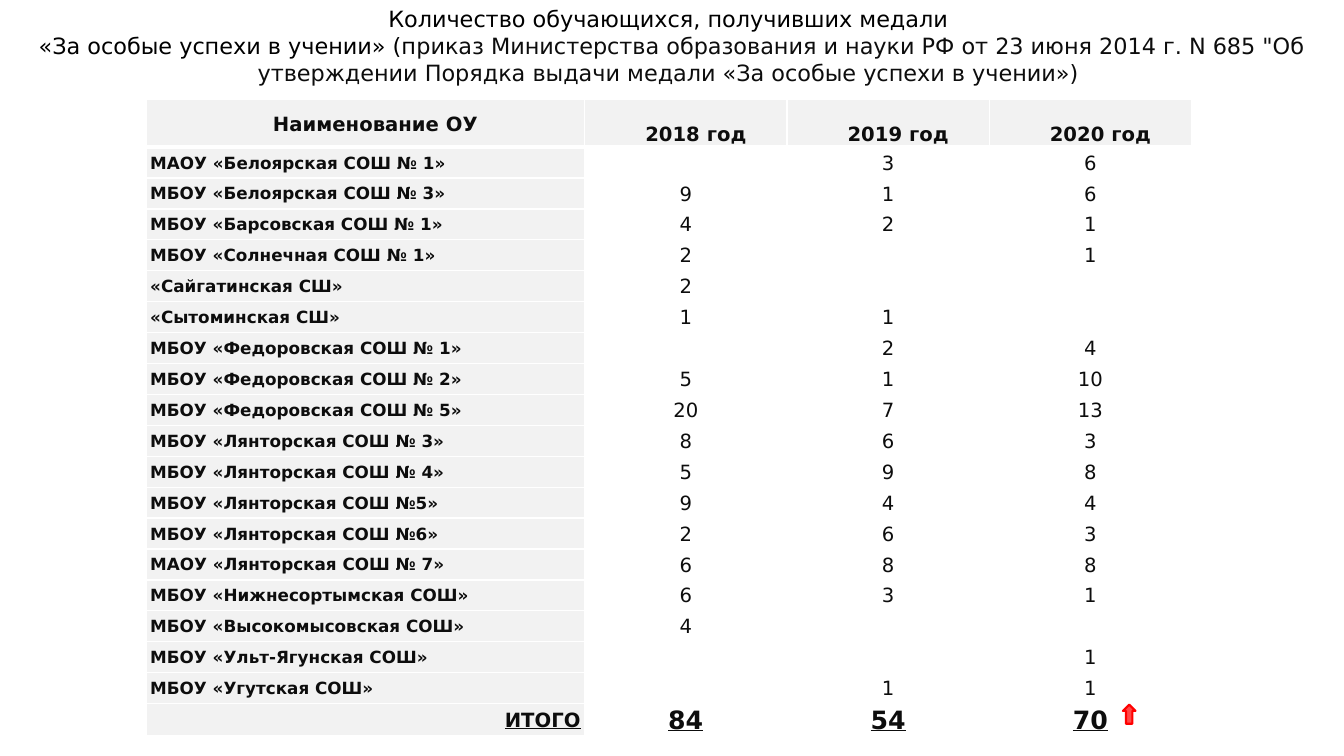
import pptx
import pptx.dml.color
import pptx.enum.shapes
import pptx.enum.text
import pptx.oxml
import pptx.oxml.ns
import pptx.util

Pt = pptx.util.Pt
PP_ALIGN = pptx.enum.text.PP_ALIGN
ANCHOR = pptx.enum.text.MSO_ANCHOR

FONT = "DejaVu Sans"
INK, GREY, WHITE = "0D0D0D", "F2F2F2", "FFFFFF"

TITLE = [
    ["Количество обучающихся, получивших медали"],
    [" «За особые успехи в учении» (п",
     "риказ Министерства образования и науки РФ от 23 июня 2014 г. N 685 "
     "\"Об утверждении Порядка выдачи медали «За особые успехи в учении»)"],
]

MEDALS = [
    ("Наименование ОУ", "2018 год", "2019 год", "2020 год"),
    ("МАОУ «Белоярская СОШ № 1»", "", "3", "6"),
    ("МБОУ «Белоярская СОШ № 3»", "9", "1", "6"),
    ("МБОУ «Барсовская СОШ № 1»", "4", "2", "1"),
    ("МБОУ «Солнечная СОШ № 1»", "2", "", "1"),
    ("«Сайгатинская СШ»", "2", "", ""),
    ("«Сытоминская СШ»", "1", "1", ""),
    ("МБОУ «Федоровская СОШ № 1»", "", "2", "4"),
    ("МБОУ «Федоровская СОШ № 2»", "5", "1", "10"),
    ("МБОУ «Федоровская СОШ № 5»", "20", "7", "13"),
    ("МБОУ «Лянторская СОШ № 3»", "8", "6", "3"),
    ("МБОУ «Лянторская СОШ № 4»", "5", "9", "8"),
    ("МБОУ «Лянторская СОШ №5»", "9", "4", "4"),
    ("МБОУ «Лянторская СОШ №6»", "2", "6", "3"),
    ("МАОУ «Лянторская СОШ № 7»", "6", "8", "8"),
    ("МБОУ «Нижнесортымская СОШ»", "6", "3", "1"),
    ("МБОУ «Высокомысовская СОШ»", "4", "", ""),
    ("МБОУ «Ульт-Ягунская СОШ»", "", "", "1"),
    ("МБОУ «Угутская СОШ»", "", "1", "1"),
    ("ИТОГО", "84", "54", "70"),
]


def rgb(color):
    return pptx.dml.color.RGBColor.from_string(color)


def format_run(r, size, color, bold=False, underline=False):
    r.font.name = FONT
    r.font.size = Pt(size)
    r.font.color.rgb = rgb(color)
    r.font.bold = bold
    r.font.underline = underline


def set_borders(cell, **widths):
    tcPr = cell._tc.get_or_add_tcPr()
    for side in "LRTB":
        tcPr.append(pptx.oxml.parse_xml(
            f'<a:ln{side} {pptx.oxml.ns.nsdecls("a")} w="{Pt(widths.get(side, 1))}">'
            f'<a:solidFill><a:srgbClr val="{WHITE}"/></a:solidFill></a:ln{side}>'))


def add_title(s, left, top, width, height):
    sp = s.shapes.title
    sp.left, sp.top, sp.width, sp.height = Pt(left), Pt(top), Pt(width), Pt(height)
    tf = sp.text_frame
    tf.word_wrap = True
    tf.auto_size = pptx.enum.text.MSO_AUTO_SIZE.SHAPE_TO_FIT_TEXT
    tf.vertical_anchor = ANCHOR.TOP
    for i, parts in enumerate(TITLE):
        p = tf.add_paragraph() if i else tf.paragraphs[0]
        p.alignment = PP_ALIGN.CENTER
        for part, color in zip(parts, ("000000", INK)):
            r = p.add_run()
            r.text = part
            format_run(r, 16, color)


def fill_cell(cell, text, row, col):
    header, total = row == 0, row == len(MEDALS) - 1
    cell.margin_left = cell.margin_right = Pt(2.9)
    cell.margin_top = cell.margin_bottom = 0
    cell.vertical_anchor = ANCHOR.TOP if header and col else ANCHOR.MIDDLE
    set_borders(cell, B=3 if header else 1, T=3 if row == 1 else 1)
    cell.fill.solid()
    cell.fill.fore_color.rgb = rgb(GREY if header or col == 0 else WHITE)

    p = cell.text_frame.paragraphs[0]
    p.text = text
    p.line_spacing = 2.0 if header and col else 1.07
    if header or col:
        p.alignment = PP_ALIGN.CENTER
    else:
        p.alignment = PP_ALIGN.RIGHT if total else PP_ALIGN.LEFT
    if header:
        p._p.get_or_add_pPr().set("marL", str(Pt(14.4)))

    if total:
        size = 18 if col else 14
    else:
        size = 14 if header or col else 12
    for r in p.runs:
        format_run(r, size, INK, header or total or col == 0, total)


def add_medal_table(s, left, top, width, height):
    frame = s.shapes.add_table(len(MEDALS), len(MEDALS[0]),
                               Pt(left), Pt(top), Pt(width), Pt(height))
    table = frame.table
    table.horz_banding = False

    # Wide name column and tall header, the rest shared equally
    name_width, header_height = 313.2, 33.8
    year_width = (width - name_width) / (len(MEDALS[0]) - 1)
    row_height = (height - header_height) / (len(MEDALS) - 1)
    for i, column in enumerate(table.columns):
        column.width = Pt(year_width if i else name_width)
    for i, row in enumerate(table.rows):
        row.height = Pt(row_height if i else header_height)

    for i, values in enumerate(MEDALS):
        for j, text in enumerate(values):
            fill_cell(table.cell(i, j), text, i, j)

    # Growth arrow beside the last total
    sp = s.shapes.add_shape(pptx.enum.shapes.MSO_SHAPE.UP_ARROW,
                            Pt(left + width - 49), Pt(top + height - 21.6),
                            Pt(9), Pt(13.7))
    sp.shadow.inherit = False
    sp.fill.solid()
    sp.fill.fore_color.rgb = rgb("FF4747")
    sp.line.color.rgb = rgb("FF0000")
    sp.line.width = Pt(1.5)


def main():
    prs = pptx.Presentation()
    prs.slide_width, prs.slide_height = Pt(960), Pt(540)
    s = prs.slides.add_slide(prs.slide_layouts[5])
    add_title(s, 5.8, 0, 943.2, 65.5)
    add_medal_table(s, 104.4, 71.3, 746.7, 453.6)
    prs.save("out.pptx")


if __name__ == "__main__":
    main()
